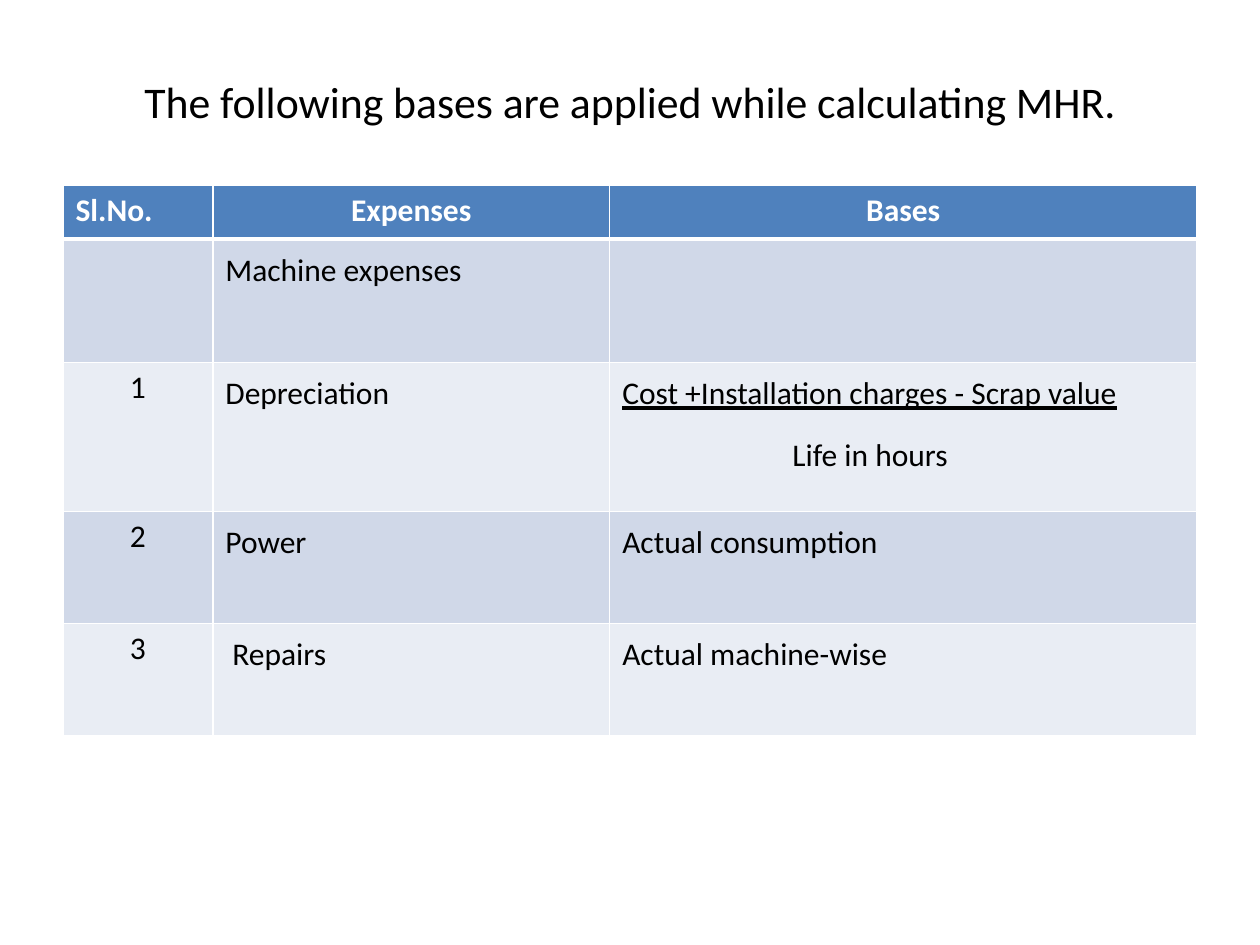
from dataclasses import dataclass
from lxml.etree import SubElement
from pptx import Presentation
from pptx.dml.color import RGBColor
from pptx.enum.text import MSO_ANCHOR, PP_ALIGN
from pptx.oxml.ns import qn
from pptx.util import Cm, Pt


@dataclass(frozen=True)
class Theme:
    font: str = "Calibri"
    ink: str = "000000"
    white: str = "FFFFFF"
    head: str = "4F81BD"
    bands: tuple = ("E9EDF4", "D0D8E8")
    title: int = 25
    body: int = 18


THEME = Theme()
WIDTHS = (3.02, 8, 11.84)
HEIGHTS = (1.09, 2.49, 3, 2.26, 2.26)
FRACTION = ("Cost +Installation charges - Scrap value", "Life in hours")
ROWS = (
    ("Sl.No.", "Expenses", "Bases"),
    ("", "Machine expenses", ""),
    ("1", "Depreciation", "\n".join(FRACTION)),
    ("2", "Power", "Actual consumption"),
    ("3", "Repairs", "Actual machine-wise"),
)
INDENTS = {"Life in hours": 3.43, "Repairs": 0.14}


def style(para, size, color, align, bold=False):
    font = para.font
    font.name, font.size, font.bold = THEME.font, Pt(size), bold
    font.color.rgb = RGBColor.from_string(color)
    para.alignment = align


def space(para):
    para.line_spacing = 1.15
    para.space_after = Pt(10)


def border(cell, row):
    props = cell._tc.get_or_add_tcPr()
    widths = {"L": 1, "R": 1, "T": 3 if row == 1 else 1, "B": 3 if row == 0 else 1}
    for side, width in widths.items():
        line = SubElement(props, qn(f"a:ln{side}"), w=str(Pt(width)))
        fill = SubElement(line, qn("a:solidFill"))
        SubElement(fill, qn("a:srgbClr"), val=THEME.white)


def fill_cell(cell, text, row, col):
    head = row == 0
    border(cell, row)
    cell.fill.solid()
    shade = THEME.head if head else THEME.bands[row % 2]
    cell.fill.fore_color.rgb = RGBColor.from_string(shade)
    cell.text = text
    center = head != (col == 0)
    for para in cell.text_frame.paragraphs:
        style(para, THEME.body, THEME.white if head else THEME.ink,
              PP_ALIGN.CENTER if center else PP_ALIGN.LEFT, head)
        if not head and col:
            space(para)
        if para.text == FRACTION[0]:
            para.font.underline = True
            para.runs[0].font.underline = True
        if para.text in INDENTS:
            para._p.get_or_add_pPr().set("marL", str(Cm(INDENTS[para.text])))


def add_title(slide, text):
    title = slide.shapes.title
    title.left, title.top = Cm(1.27), Cm(0.76)
    title.width, title.height = Cm(22.86), Cm(3.18)
    frame = title.text_frame
    frame.text = text
    frame.vertical_anchor = MSO_ANCHOR.MIDDLE
    frame.margin_bottom = Cm(0.91)
    para = frame.paragraphs[0]
    style(para, THEME.title, THEME.ink, PP_ALIGN.CENTER)
    space(para)


def add_grid(slide):
    table = slide.shapes.add_table(
        len(ROWS), len(WIDTHS), Cm(1.27), Cm(3.73),
        Cm(sum(WIDTHS)), Cm(sum(HEIGHTS))).table
    for column, width in zip(table.columns, WIDTHS):
        column.width = Cm(width)
    for line, height in zip(table.rows, HEIGHTS):
        line.height = Cm(height)
    for row, texts in enumerate(ROWS):
        for col, text in enumerate(texts):
            fill_cell(table.cell(row, col), text, row, col)


def main():
    deck = Presentation()
    deck.slide_width, deck.slide_height = Cm(25.4), Cm(19.05)
    slide = deck.slides.add_slide(deck.slide_layouts[5])
    add_title(slide, "The following bases are applied while calculating MHR.")
    add_grid(slide)
    deck.save("out.pptx")


if __name__ == "__main__":
    main()
